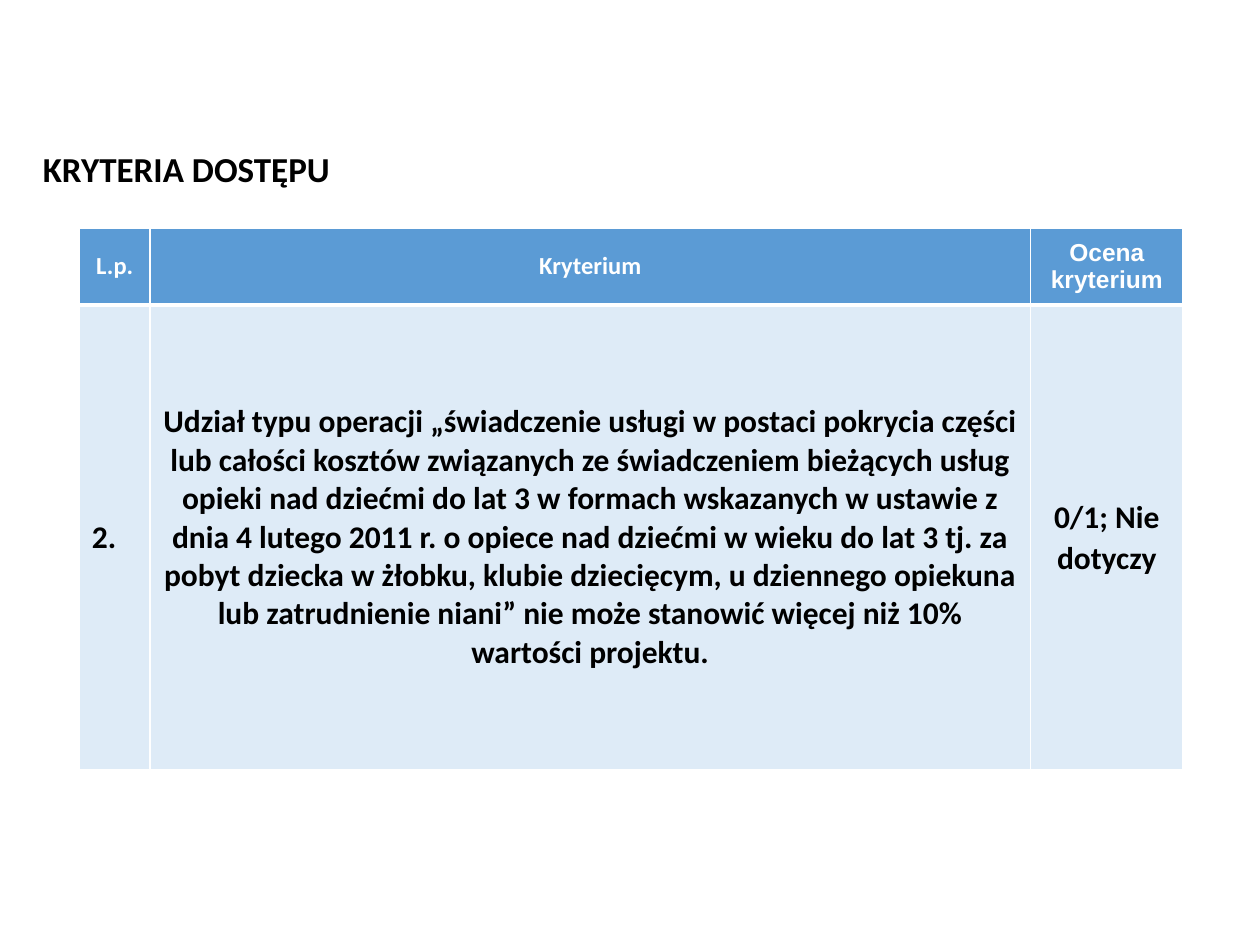
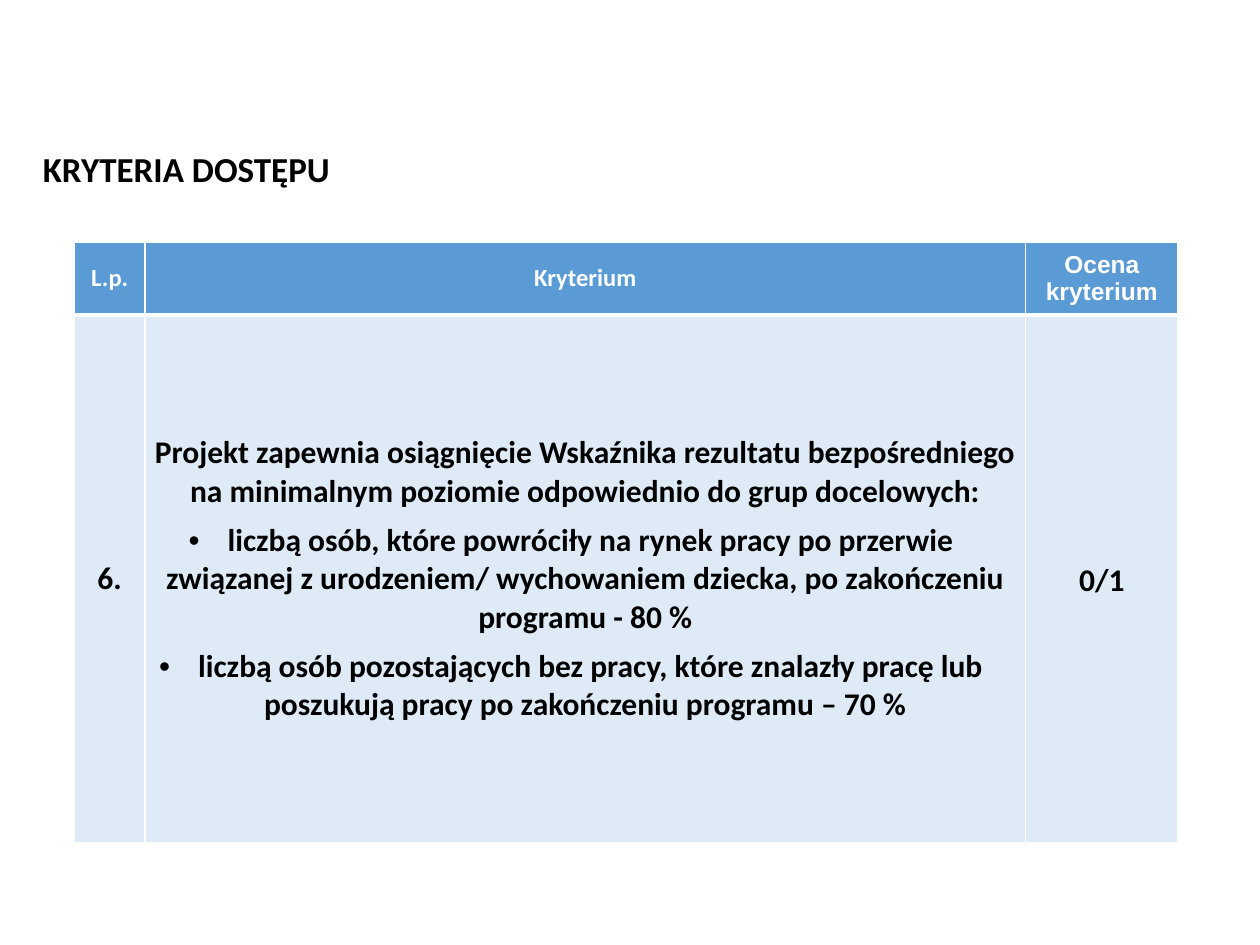
from lxml import etree
from pptx import Presentation
from pptx.dml.color import RGBColor
from pptx.enum.text import MSO_ANCHOR, MSO_AUTO_SIZE, PP_ALIGN
from pptx.oxml.ns import qn
from pptx.util import Inches, Pt

LEFT, MID = PP_ALIGN.LEFT, PP_ALIGN.CENTER
CENTRE, GROW = MSO_ANCHOR.MIDDLE, MSO_AUTO_SIZE.SHAPE_TO_FIT_TEXT
BLUE, PALE, WHITE, BLACK = "5B9BD5", "DEEBF7", "FFFFFF", "000000"

deck = Presentation()
deck.slide_width, deck.slide_height = Inches(10), Inches(7.5)
COL, ROW = deck.slide_width / 100, deck.slide_height / 100
WIDTHS = [5.6, 69.9, 12.1]
SIDES = ["left", "top", "width", "height"]

THIN = [0.04] * 4
PLAIN = [0.1, 0.05, 0.1, 0.05]
HEAD = [
    dict(lines=["L.p."]),
    dict(lines=["Kryterium"]),
    dict(lines=["Ocena kryterium"], name="Arial"),
]
SLIDES = [
    dict(left=6.3, top=24.13, rows=[8.13, 49.2], body=[
        dict(lines=["2."], align=LEFT),
        dict(lines=[
            "Udział typu operacji „świadczenie usługi w postaci pokrycia części "
            "lub całości kosztów związanych ze świadczeniem bieżących usług "
            "opieki nad dziećmi do lat 3 w formach wskazanych w ustawie z "
            "dnia 4 lutego 2011 r. o opiece nad dziećmi w wieku do lat 3 tj. za "
            "pobyt dziecka w żłobku, klubie dziecięcym, u dziennego opiekuna "
            "lub zatrudnienie niani” nie może stanowić więcej niż 10% "
            "wartości projektu."], pad=[0.1, 0, 0.1, 0], para=dict(space_after=Pt(6))),
        dict(lines=["0/1; Nie dotyczy"], pad=THIN, para=dict(line_spacing=1.07)),
    ]),
    dict(left=5.9, top=25.6, rows=[7.73, 55.87], body=[
        dict(lines=["6."]),
        dict(lines=[
            "Projekt zapewnia osiągnięcie Wskaźnika rezultatu bezpośredniego "
            "na minimalnym poziomie odpowiednio do grup docelowych:",
            "•liczbą osób, które powróciły na rynek pracy po przerwie "
            "związanej z urodzeniem/ wychowaniem dziecka, po zakończeniu "
            "programu - 80 %",
            "•liczbą osób pozostających bez pracy, które znalazły pracę lub "
            "poszukują pracy po zakończeniu programu – 70 %",
        ], pad=THIN, para=dict(space_after=Pt(6))),
        dict(lines=["0/1"], pad=THIN, para=dict(line_spacing=1.07)),
    ]),
]


def paint(fill, tone):
    fill.solid()
    fill.fore_color.rgb = RGBColor.from_string(tone)


def write(frame, lines, size, tone, align=MID, name="Calibri", para=None):
    """Fill a text frame; a line that starts with • becomes a bullet."""
    for i, line in enumerate(lines):
        p = frame.add_paragraph() if i else frame.paragraphs[0]
        if line.startswith("•"):
            props = p._p.get_or_add_pPr()
            props.set("marL", "0")
            props.set("indent", str(-Inches(0.31)))
            etree.SubElement(props, qn("a:buFont")).set("typeface", "Arial")
            etree.SubElement(props, qn("a:buChar")).set("char", "•")
        p.alignment = align
        for key, value in (para or {}).items():
            setattr(p, key, value)
        run = p.add_run()
        run.text = line.removeprefix("•")
        for key, value in dict(size=Pt(size), bold=True, name=name).items():
            setattr(run.font, key, value)
        paint(run.font.fill, tone)


for plan in SLIDES:
    slide = deck.slides.add_slide(deck.slide_layouts[5])

    title = slide.shapes.title
    for side, share, unit in zip(SIDES, [2.4, 14.93, 37, 5.87], [COL, ROW] * 2):
        setattr(title, side, round(share * unit))
    write(title.text_frame, ["KRYTERIA DOSTĘPU"], 20, BLACK, align=LEFT)
    title.text_frame.vertical_anchor = CENTRE
    title.text_frame.auto_size = GROW

    place = [plan["left"] * COL, plan["top"] * ROW,
             sum(WIDTHS) * COL, sum(plan["rows"]) * ROW]
    table = slide.shapes.add_table(2, 3, *map(round, place)).table
    for col, width in zip(table.columns, WIDTHS):
        col.width = round(width * COL)
    for row, height in zip(table.rows, plan["rows"]):
        row.height = round(height * ROW)

    looks = [(HEAD, BLUE, WHITE, 14, (1, 3)), (plan["body"], PALE, BLACK, 18, (3, 1))]
    for r, (cells, back, tone, size, edges) in enumerate(looks):
        for c, item in enumerate(cells):
            cell = table.cell(r, c)
            props = cell._tc.get_or_add_tcPr()
            for side, weight in zip("LRTB", (1, 1, *edges)):
                line = etree.SubElement(props, qn("a:ln" + side), w=str(Pt(weight)))
                solid = etree.SubElement(line, qn("a:solidFill"))
                etree.SubElement(solid, qn("a:srgbClr")).set("val", WHITE)
            paint(cell.fill, back)
            cell.vertical_anchor = CENTRE
            for side, pad in zip(["left", "top", "right", "bottom"], item.get("pad", PLAIN)):
                setattr(cell, "margin_" + side, Inches(pad))
            text = {key: value for key, value in item.items() if key != "pad"}
            write(cell.text_frame, size=size, tone=tone, **text)

deck.save("out.pptx")
